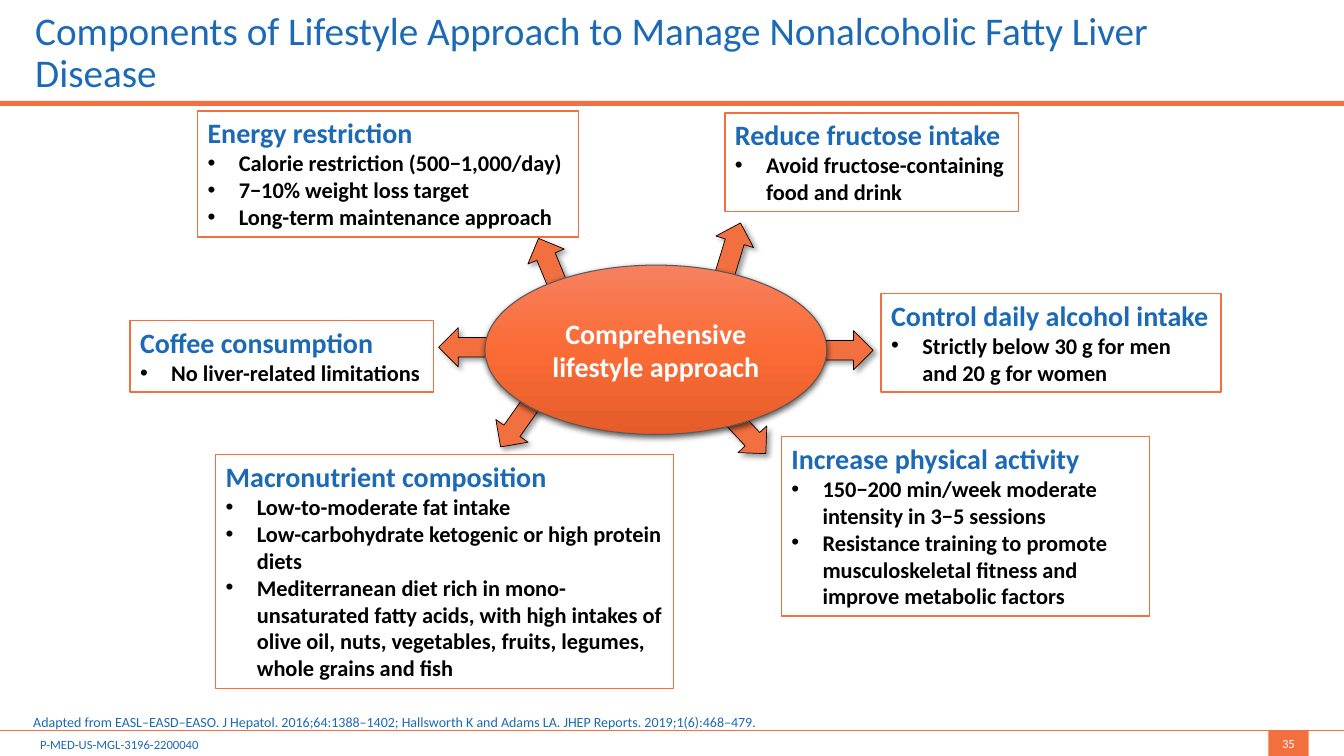
from copy import deepcopy

from lxml import etree
from pptx import Presentation
from pptx.dml.color import RGBColor
from pptx.enum import shapes, text
from pptx.oxml.ns import qn
from pptx import util as u

PX = 9144
ORANGE = RGBColor(0xF2, 0x6F, 0x3F)
BLUE = RGBColor(0x1C, 0x69, 0xB5)
WHITE = RGBColor(0xFF, 0xFF, 0xFF)
BLACK = RGBColor(0, 0, 0)
GRAY = RGBColor(0x59, 0x59, 0x59)
GLOW = [(0, RGBColor(0xF6, 0x81, 0x5F)), (0.5, RGBColor(0xFB, 0x6B, 0x36)),
        (1, RGBColor(0xE5, 0x5C, 0x2A))]
INSETS = (10, 5, 10, 5)

CARDS = [
    ((196, 110, 378, 125), False, "Energy restriction",
     ["Calorie restriction (500−1,000/day)", "7−10% weight loss target",
      "Long-term maintenance approach"]),
    ((214, 451, 454, 232), True, "Macronutrient composition",
     ["Low-to-moderate fat intake",
      "Low-carbohydrate ketogenic or high protein diets",
      "Mediterranean diet rich in mono-unsaturated fatty acids, with high intakes of "
      "olive oil, nuts, vegetables, fruits, legumes, whole grains and fish"]),
    ((719, 112, 291, 98), False, "Reduce fructose intake",
     ["Avoid fructose-containing\nfood and drink"]),
    ((874, 291, 337, 98), False, "Control daily alcohol intake",
     ["Strictly below 30 g for men\nand 20 g for women"]),
    ((129, 318, 301, 71), False, "Coffee consumption",
     ["No liver-related limitations"]),
    ((775, 433, 365, 178), True, "Increase physical activity",
     ["150−200 min/week moderate intensity in 3−5 sessions",
      "Resistance training to promote\nmusculoskeletal fitness and improve metabolic factors"]),
]
ARROWS = [(684, 239, 287), (435, 325, 0), (788, 328, 0),
          (480, 392, 305.2), (510, 253, 247.6), (694, 402, 47.1)]


def write(frame, words, size=16, color=BLUE, bold=False, align=text.PP_ALIGN.LEFT,
          bullet=False, spacing=None, first=True):
    """Write one formatted paragraph into a text frame."""
    para = frame.paragraphs[0] if first else frame.add_paragraph()
    para.text = words
    para.alignment = align
    if spacing:
        para.line_spacing = spacing
    if bullet:
        props = para._p.get_or_add_pPr()
        props.set("marL", str(31 * PX))
        props.set("indent", str(-31 * PX))
        etree.SubElement(props, qn("a:buFont")).set("typeface", "Arial")
        etree.SubElement(props, qn("a:buChar")).set("char", "•")
    for span in para.runs:
        span.font.name = "Calibri"
        span.font.size = u.Pt(size)
        span.font.bold = bold
        span.font.color.rgb = color
    for line_break in para._p.findall(qn("a:br")):
        line_break.insert(0, deepcopy(para.runs[0]._r.rPr))


class Page:
    """Hold the deck style and the current slide."""

    def __init__(self, deck):
        """Add a blank slide to the deck."""
        self.shapes = deck.slides.add_slide(deck.slide_layouts[6]).shapes

    def frame(self, box, wrap=True, anchor=text.MSO_ANCHOR.TOP, insets=INSETS):
        """Prepare the text frame of a box."""
        frame = box.text_frame
        frame.word_wrap = wrap
        frame.vertical_anchor = anchor
        (frame.margin_left, frame.margin_top,
         frame.margin_right, frame.margin_bottom) = [side * PX for side in insets]
        return frame

    def label(self, place, words, wrap=True, anchor=text.MSO_ANCHOR.TOP,
              insets=INSETS, **style):
        """Add a text box with one paragraph."""
        box = self.shapes.add_textbox(*[length * PX for length in place])
        write(self.frame(box, wrap, anchor, insets), words, **style)

    def shape(self, kind, place, fill=ORANGE, line=None, width=1, shadow=None):
        """Add a preset shape with an optional outline and shadow."""
        box = self.shapes.add_shape(kind, *[length * PX for length in place])
        box.fill.solid()
        box.fill.fore_color.rgb = fill
        if line is None:
            box.line.fill.background()
        else:
            box.line.color.rgb = line
            box.line.width = u.Pt(width)
        box.shadow.inherit = False
        if shadow:
            self.shade(box, *shadow)
        return box

    def shade(self, box, alpha, blur, distance, angle):
        """Cast a black outer shadow."""
        effects = box._element.spPr.find(qn("a:effectLst"))
        outer = etree.SubElement(
            effects, qn("a:outerShdw"), blurRad=str(u.Pt(blur)),
            dist=str(u.Pt(distance)), dir=str(angle * 60000), rotWithShape="0")
        tint = etree.SubElement(outer, qn("a:srgbClr"), val=str(BLACK))
        etree.SubElement(tint, qn("a:alpha"), val=str(alpha * 1000))

    def rule(self, top):
        """Draw a thin line across the slide."""
        line = self.shapes.add_connector(
            shapes.MSO_CONNECTOR.STRAIGHT, 0, top * PX, 1333 * PX, top * PX)
        line.line.color.rgb = ORANGE
        line.line.width = u.Pt(1)
        etree.SubElement(line._element.spPr, qn("a:effectLst"))

    def card(self, place, wrap, heading, items):
        """Add an outlined card with a heading and bullets."""
        box = self.shape(shapes.MSO_SHAPE.RECTANGLE, place, WHITE, ORANGE)
        frame = self.frame(box, wrap)
        write(frame, heading, size=20, bold=True)
        for item in items:
            write(frame, item, color=BLACK, bold=True, bullet=True, first=False)

    def arrow(self, left, top, angle):
        """Add a shadowed double arrow."""
        box = self.shape(shapes.MSO_SHAPE.LEFT_RIGHT_ARROW, (left, top, 78, 39),
                         line=BLACK, width=0.5, shadow=(40, 4, 3, 45))
        box.rotation = angle

    def hub(self, place, words):
        """Add the central ellipse with its gradient."""
        box = self.shape(shapes.MSO_SHAPE.OVAL, place, line=GRAY, width=0.75,
                         shadow=(63, 4.5, 1.5, 90))
        box.fill.gradient()
        box.fill.gradient_angle = 270
        stops = box._element.spPr.find(qn("a:gradFill")).find(qn("a:gsLst"))
        stops.append(deepcopy(stops[0]))
        for stop, (position, color) in zip(box.fill.gradient_stops, GLOW):
            stop.position = position
            stop.color.rgb = color
        write(self.frame(box, anchor=text.MSO_ANCHOR.MIDDLE), words, size=20,
              color=WHITE, bold=True, align=text.PP_ALIGN.CENTER)


def main():
    """Build and save the slide."""
    deck = Presentation()
    deck.slide_width, deck.slide_height = 1333 * PX, 750 * PX
    page = Page(deck)
    number = (1258, 725, 40, 25)
    page.shape(shapes.MSO_SHAPE.RECTANGLE, number)
    page.shape(shapes.MSO_SHAPE.RECTANGLE, (0, 100, 1333, 5))
    page.rule(725)
    page.label((30, 726, 178, 25), "P-MED-US-MGL-3196-2200040", wrap=False, size=9)
    page.label((35, 0, 1187, 100),
               "Components of Lifestyle Approach to Manage Nonalcoholic Fatty Liver Disease",
               anchor=text.MSO_ANCHOR.BOTTOM, insets=(0, 5, 0, 5), size=28, spacing=0.9)
    page.label(number, "35", anchor=text.MSO_ANCHOR.MIDDLE, size=9, color=WHITE,
               align=text.PP_ALIGN.CENTER)
    page.label((33, 710, 1113, 15),
               "Adapted from EASL–EASD–EASO. J Hepatol. 2016;64:1388–1402; "
               "Hallsworth K and Adams LA. JHEP Reports. 2019;1(6):468–479.",
               anchor=text.MSO_ANCHOR.BOTTOM, insets=(0, 0, 0, 0), size=10, spacing=0.9)
    for card in CARDS:
        page.card(*card)
    for arrow in ARROWS:
        page.arrow(*arrow)
    page.hub((481, 263, 339, 168), "Comprehensive lifestyle approach")
    deck.save("out.pptx")


if __name__ == "__main__":
    main()
